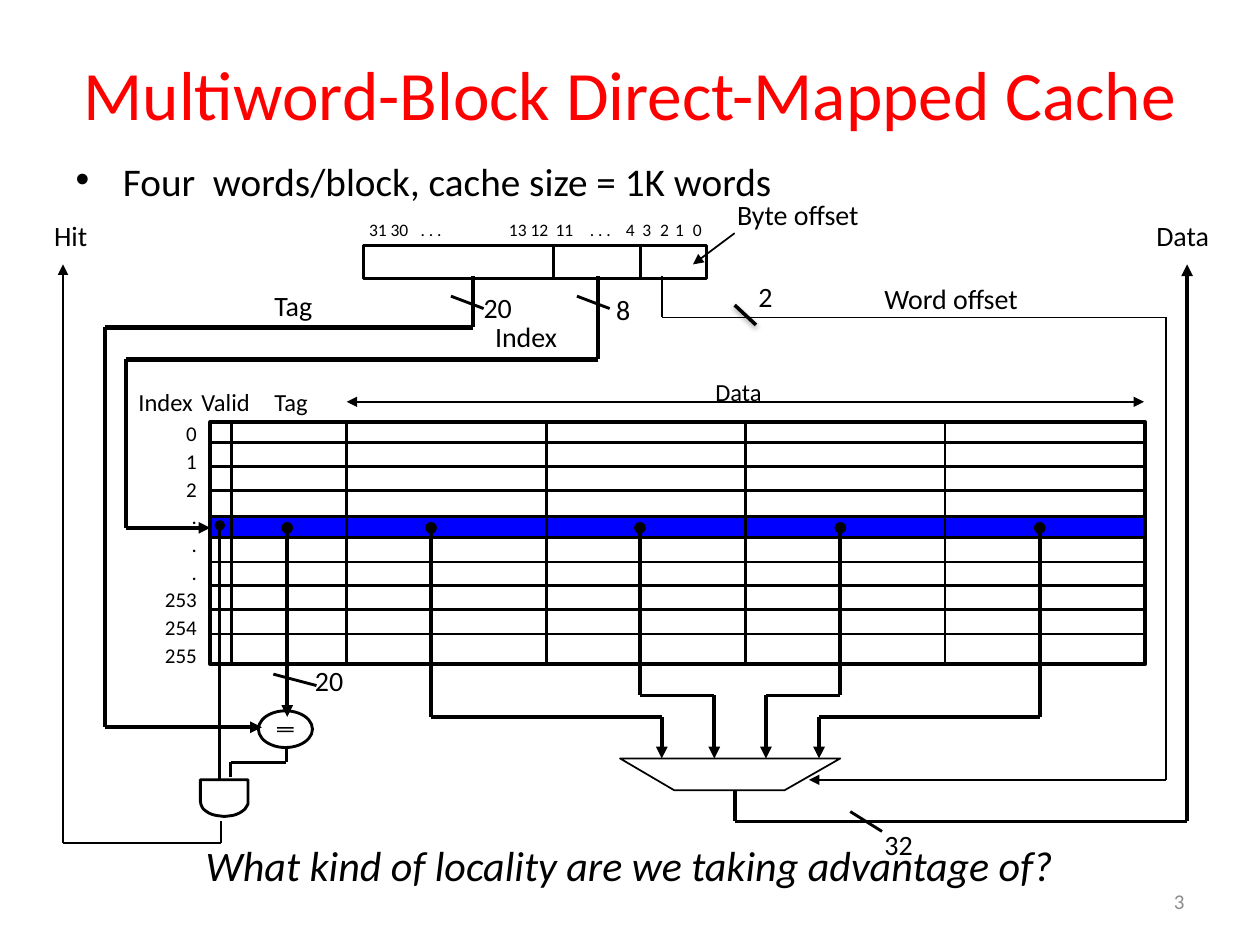
"""Build a slide that explains a direct-mapped cache with multiword blocks."""
from dataclasses import dataclass
from math import cos, pi, sin
from typing import Any, NamedTuple

from lxml import etree
from pptx import Presentation
from pptx.dml.color import RGBColor
from pptx.enum.shapes import MSO_CONNECTOR, MSO_SHAPE
from pptx.enum.text import MSO_ANCHOR, MSO_AUTO_SIZE, PP_ALIGN
from pptx.oxml.ns import qn
from pptx.util import Cm, Pt

BLACK = RGBColor(0x00, 0x00, 0x00)
RED = RGBColor(0xFF, 0x00, 0x00)
BLUE = RGBColor(0x00, 0x00, 0xFF)
GRAY = RGBColor(0x8C, 0x8C, 0x8C)
STRAIGHT = MSO_CONNECTOR.STRAIGHT
RECT, OVAL = MSO_SHAPE.RECTANGLE, MSO_SHAPE.OVAL
LEFT, RIGHT, CENTER = PP_ALIGN.LEFT, PP_ALIGN.RIGHT, PP_ALIGN.CENTER
TOP, MIDDLE = MSO_ANCHOR.TOP, MSO_ANCHOR.MIDDLE
GROW, FIXED = MSO_AUTO_SIZE.SHAPE_TO_FIT_TEXT, MSO_AUTO_SIZE.NONE
THIN, MID, BOLD, HEAVY = 1, 1.63, 2.25, 3
ARROW, DOT = "triangle", "oval"
Point = tuple[float, float]


class Box(NamedTuple):
    x: float
    y: float
    w: float
    h: float


@dataclass
class Label:
    text: str
    box: Box
    size: float = 16
    color: RGBColor = BLACK
    align: PP_ALIGN = LEFT
    anchor: MSO_ANCHOR = TOP
    wrap: bool = False
    fit: MSO_AUTO_SIZE = GROW
    space: float = 1.0
    slant: bool = False
    tabs: tuple[float, ...] = ()


@dataclass
class Wire:
    points: list[Point]
    width: float = MID
    head: str = ""
    tail: str = ""


def unit(size: float) -> int:
    return Cm(round(size * 2.54, 2))


def apply(item: Any, form: dict[str, Any]) -> None:
    for name, value in form.items():
        setattr(item, name, value)


def place(item: Any, box: Box) -> None:
    apply(item, dict(zip(("left", "top", "width", "height"), map(unit, box))))


def write(frame: Any, label: Label) -> None:
    apply(frame, {"text": label.text, "word_wrap": label.wrap,
                  "auto_size": label.fit, "vertical_anchor": label.anchor})
    for para in frame.paragraphs:
        apply(para, {"alignment": label.align, "line_spacing": label.space})
        for run in para.runs:
            apply(run.font, {"name": "Calibri", "size": Pt(label.size), "italic": label.slant})
            run.font.color.rgb = label.color
        if label.tabs:
            stops = etree.SubElement(para._p.get_or_add_pPr(), qn("a:tabLst"))
            for stop in label.tabs:
                etree.SubElement(stops, qn("a:tab"), pos=str(unit(stop)), algn="l")


def add_label(shapes: Any, label: Label) -> None:
    write(shapes.add_textbox(*map(unit, label.box)).text_frame, label)


def add_wire(shapes: Any, wire: Wire) -> list[Any]:
    """Draw the wire's legs and return the effect list of each."""
    effects = []
    last = len(wire.points) - 2
    for i, (start, end) in enumerate(zip(wire.points, wire.points[1:])):
        leg = shapes.add_connector(STRAIGHT, *map(unit, start + end))
        leg.line.width = Pt(wire.width)
        leg.line.color.rgb = BLACK
        line = leg.line._get_or_add_ln()
        if wire.head and i == 0:
            etree.SubElement(line, qn("a:headEnd"), type=wire.head)
        if wire.tail and i == last:
            etree.SubElement(line, qn("a:tailEnd"), type=wire.tail)
        effects.append(etree.SubElement(leg._element.spPr, qn("a:effectLst")))
    return effects


def paint(shape: Any, width: float, fill: RGBColor | None = None) -> None:
    shape.shadow.inherit = False
    if fill is None:
        shape.fill.background()
    else:
        shape.fill.solid()
        shape.fill.fore_color.rgb = fill
    if width:
        shape.line.width = Pt(width)
        shape.line.color.rgb = BLACK
    else:
        shape.line.fill.background()


def add_block(shapes: Any, kind: MSO_SHAPE, box: Box, width: float,
              fill: RGBColor | None = None) -> None:
    paint(shapes.add_shape(kind, *map(unit, box)), width, fill)


def add_form(shapes: Any, points: list[Point], width: float) -> None:
    first, *rest = [(unit(x), unit(y)) for x, y in points]
    maker = shapes.build_freeform(*first)
    maker.add_line_segments(rest, close=True)
    paint(maker.convert_to_shape(), width)


def add_shade(effect: Any) -> None:
    shade = etree.SubElement(effect, qn("a:outerShdw"), blurRad=str(Pt(3.1)),
                             dist=str(Pt(1.6)), dir="5400000", rotWithShape="0")
    tint = etree.SubElement(shade, qn("a:srgbClr"), val=str(BLACK))
    etree.SubElement(tint, qn("a:alpha"), val="38000")


ROWS = [3.51 + 0.19 * i for i in (0, 1, 2, 5, 6, 7, 8)]
COLUMNS = [1.835] + [2.75 + 1.583 * i for i in range(4)]
LANES = [(3.42, 5.69, 5.25), (5.08, 5.52, 5.67), (6.67, 5.52, 6.08), (8.25, 5.69, 6.5)]
SLASHES = [(4.58, 2.35, 4.84, 2.45), (3.58, 2.35, 3.84, 2.45),
           (2.17, 5.35, 2.51, 5.44), (6.75, 6.44, 7, 6.6)]
MUX = [(4.92, 6.02), (5.35, 6.27), (6.23, 6.27), (6.67, 6.02)]
GATE = [(1.59, 6.19), (1.97, 6.19)] + [
    (1.78 + 0.19 * cos(pi * i / 18), 6.36 + 0.12 * sin(pi * i / 18)) for i in range(19)]

WIRES = [
    *[Wire([(9.08, y), (1.67, y)]) for y in ROWS],
    *[Wire([(x, 3.35), (x, 5.27)]) for x in COLUMNS],
    *[Wire([(a, b), (c, d)]) for a, b, c, d in SLASHES],
    *[Wire([(x, 4.19), (x, y), (end, y), (end, 6.02)], BOLD, DOT, ARROW)
      for x, y, end in LANES],
    *[Wire([(x, 1.95), (x, 2.2)]) for x in (4.39, 5.085)],
    Wire([(4.75, 2.19), (4.75, 2.85)], BOLD),
    Wire([(4.75, 2.85), (1, 2.85)], HEAVY),
    Wire([(1, 2.85), (1, 4.19), (1.67, 4.19)], BOLD, tail=ARROW),
    Wire([(3.75, 2.19), (3.75, 2.6)], BOLD),
    Wire([(3.75, 2.6), (0.83, 2.6)], HEAVY),
    Wire([(0.83, 2.6), (0.83, 5.77), (2.08, 5.77)], BOLD, tail=ARROW),
    Wire([(2.75, 3.19), (9.08, 3.19)], THIN, ARROW, ARROW),
    Wire([(5.83, 1.85), (5.5, 2.1)], THIN, tail=ARROW),
    Wire([(2.28, 4.19), (2.28, 5.69)], BOLD, DOT, ARROW),
    Wire([(1.745, 4.17), (1.745, 6.19)], MID, DOT),
    Wire([(2.27, 5.93), (2.27, 6.05), (1.83, 6.05), (1.83, 6.17)]),
    Wire([(1.75, 6.52), (1.75, 6.69), (0.5, 6.69), (0.5, 2.1)], THIN, tail=ARROW),
    Wire([(5.25, 2.19), (5.25, 2.52), (9.25, 2.52), (9.25, 6.19), (6.42, 6.19)],
         THIN, tail=ARROW),
    Wire([(5.83, 6.27), (5.83, 6.52), (9.42, 6.52), (9.42, 2.1)], BOLD, tail=ARROW),
]

LABELS = [
    Label("8", Box(4.79, 2.27, 0.33, 0.37)),
    Label("Index", Box(3.83, 2.49, 0.74, 0.37)),
    Label("2", Box(5.92, 2.17, 0.32, 0.37)),
    Label("20", Box(2.4, 5.22, 0.45, 0.37)),
    Label("20", Box(3.74, 2.26, 0.45, 0.37)),
    Label("Tag", Box(2.08, 2.24, 0.58, 0.37)),
    Label("Hit", Box(0.33, 1.69, 0.47, 0.37)),
    Label("Data", Box(9.08, 1.69, 0.67, 0.37)),
    Label("32", Box(6.92, 6.52, 0.45, 0.37)),
    Label("Word offset", Box(6.92, 2.19, 1.75, 0.37), wrap=True),
    Label("Byte offset", Box(5.75, 1.52, 1.5, 0.37), wrap=True),
    Label("Data", Box(5.58, 2.94, 0.61, 0.33), 14),
    Label("Index", Box(1, 3.02, 0.68, 0.33), 14),
    Label("Tag", Box(2.08, 3.02, 0.53, 0.33), 14),
    Label("Valid", Box(1.5, 3.02, 0.63, 0.33), 14),
    Label("0\n1\n2\n.\n.\n.\n253\n254\n255", Box(1.18, 3.27, 0.48, 2.09), 12,
          align=RIGHT, space=1.1),
    Label("31 30\t. . .\t13 12\t11\t. . .\t4\t3\t2\t1\t0", Box(2.83, 1.69, 3.35, 0.27), 10,
          wrap=True, tabs=(0.41, 1.11, 1.48, 1.75, 2.04, 2.17, 2.31, 2.43, 2.57)),
    Label("What kind of locality are we taking advantage of?", Box(0.58, 6.66, 8.83, 0.5), 24,
          align=CENTER, wrap=True, fit=FIXED, space=0.9, slant=True),
    Label("3", Box(7.17, 6.95, 2.33, 0.4), 12, GRAY, RIGHT, MIDDLE, True, FIXED),
]
TITLE = Label("Multiword-Block Direct-Mapped Cache", Box(0.5, 0.25, 9, 0.97), 39.6, RED,
              CENTER, MIDDLE, True, FIXED)
LIST = Label("Four  words/block, cache size = 1K words", Box(0.5, 1.33, 8.83, 0.58), 22.4,
             wrap=True, fit=FIXED, space=0.6)


def main() -> None:
    deck = Presentation()
    apply(deck, {"slide_width": Cm(25.4), "slide_height": Cm(19.05)})
    shapes = deck.slides.add_slide(deck.slide_layouts[1]).shapes
    for holder, label in zip(shapes.placeholders, (TITLE, LIST)):
        place(holder, label.box)
        write(holder.text_frame, label)
    add_block(shapes, RECT, Box(1.67, 4.1, 7.42, 0.17), MID, BLUE)
    add_block(shapes, RECT, Box(1.67, 3.35, 7.42, 1.92), BOLD)
    add_block(shapes, RECT, Box(2.88, 1.95, 2.73, 0.26), MID)
    add_block(shapes, OVAL, Box(2.05, 5.64, 0.43, 0.29), MID)
    for y in (5.77, 5.8):
        add_block(shapes, RECT, Box(2.2, y, 0.13, 0.01), 0, BLACK)
    add_form(shapes, MUX, THIN)
    add_form(shapes, GATE, MID)
    for wire in WIRES:
        add_wire(shapes, wire)
    for label in LABELS:
        add_label(shapes, label)
    add_shade(add_wire(shapes, Wire([(5.83, 2.42), (6, 2.58)], 2))[0])
    deck.save("out.pptx")


if __name__ == "__main__":
    main()
